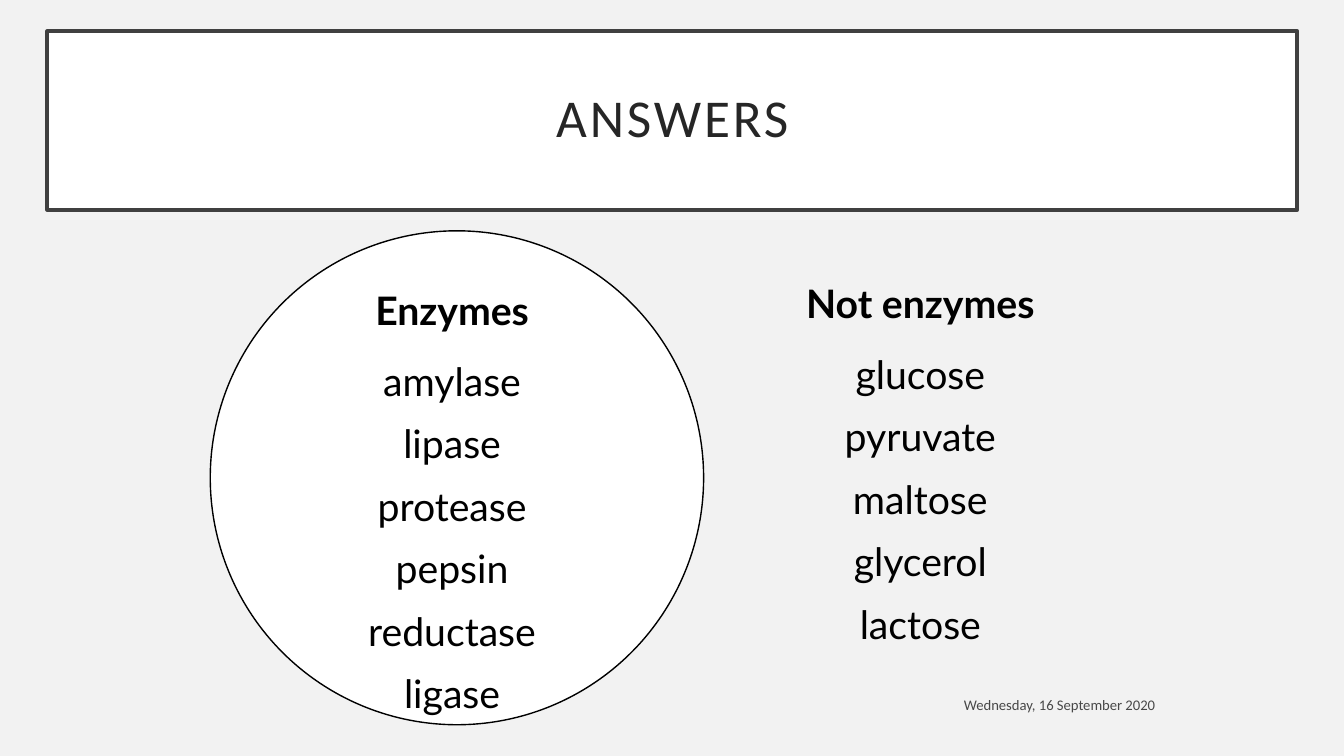
from lxml.etree import SubElement
from pptx import Presentation
from pptx.dml.color import RGBColor
from pptx.enum.shapes import MSO_SHAPE
from pptx.enum.text import MSO_ANCHOR, MSO_AUTO_SIZE, PP_ALIGN
from pptx.oxml.ns import qn
from pptx.util import Pt

COLORS = {
    "background": "F2F2F2",
    "panel": "FFFFFF",
    "border": "404040",
    "title": "262626",
    "text": "000000",
}
ENZYMES = ["amylase", "lipase", "protease", "pepsin", "reductase", "ligase"]
NOT_ENZYMES = ["glucose", "pyruvate", "maltose", "glycerol", "lactose"]


def rgb(name):
    """Return the named colour."""
    return RGBColor.from_string(COLORS[name])


def style_panel(sp, border, width):
    """Give a shape the white fill and an outline."""
    sp.fill.solid()
    sp.fill.fore_color.rgb = rgb("panel")
    sp.line.color.rgb = rgb(border)
    sp.line.width = Pt(width)


def add_run(p, text, font, size, color, bold=False):
    """Add a formatted run to a paragraph."""
    r = p.add_run()
    r.text = text
    r.font.name = font
    r.font.size = Pt(size)
    r.font.bold = bold
    r.font.color.rgb = rgb(color)
    return r


def add_text_box(s, left, top, width, height):
    """Add a wrapping text box and return its text frame."""
    tf = s.shapes.add_textbox(Pt(left), Pt(top), Pt(width), Pt(height)).text_frame
    tf.word_wrap = True
    return tf


def format_title(s, text):
    """Place the title placeholder as a framed panel."""
    sp = s.shapes.title
    sp.left, sp.top, sp.width, sp.height = Pt(33.84), Pt(22.32), Pt(892.8), Pt(127.44)
    style_panel(sp, "border", 3)
    tf = sp.text_frame
    tf.auto_size = MSO_AUTO_SIZE.NONE
    tf.vertical_anchor = MSO_ANCHOR.MIDDLE
    tf.margin_left = tf.margin_right = Pt(21.6)
    tf.margin_top = tf.margin_bottom = Pt(14.4)
    p = tf.paragraphs[0]
    p.alignment = PP_ALIGN.CENTER
    p.line_spacing = 0.9
    r = add_run(p, text, "Calibri", 38, "title")
    r.font._element.set("spc", "200")


def add_circle(s, left, top, width, height):
    """Add the outlined circle behind the enzymes."""
    sp = s.shapes.add_shape(
        MSO_SHAPE.OVAL, Pt(left), Pt(top), Pt(width), Pt(height))
    sp.shadow.inherit = False
    style_panel(sp, "text", 1)


def add_word_list(s, left, top, width, height, heading, words):
    """Add a bold heading with centred words below it."""
    tf = add_text_box(s, left, top, width, height)
    for i, word in enumerate([heading] + words):
        p = tf.add_paragraph() if i else tf.paragraphs[0]
        p.alignment = PP_ALIGN.CENTER
        p.line_spacing = 1.15
        p.space_after = Pt(6 if i else 12)
        add_run(p, word, "Lato", 28, "text", bold=i == 0)


def add_date(s, text):
    """Add the right-aligned translucent date."""
    tf = add_text_box(s, 615.6, 491.04, 216.72, 25.2)
    tf.vertical_anchor = MSO_ANCHOR.MIDDLE
    p = tf.paragraphs[0]
    p.alignment = PP_ALIGN.RIGHT
    r = add_run(p, text, "Calibri", 10.5, "text")
    color = r.font._element.find(".//" + qn("a:srgbClr"))
    SubElement(color, qn("a:alpha")).set("val", "70000")


def main():
    """Build and save the answers slide."""
    prs = Presentation()
    prs.slide_width, prs.slide_height = Pt(960), Pt(540)
    s = prs.slides.add_slide(prs.slide_layouts[5])
    s.background.fill.solid()
    s.background.fill.fore_color.rgb = rgb("background")
    add_date(s, "Wednesday, 16 September 2020")
    format_title(s, "ANSWERS")
    add_circle(s, 150.2, 164.9, 352.4, 352.8)
    add_word_list(s, 225.36, 195.84, 195.12, 321.84, "Enzymes", ENZYMES)
    add_word_list(s, 527.04, 190.8, 260.64, 313.92, "Not enzymes", NOT_ENZYMES)
    prs.save("out.pptx")


if __name__ == "__main__":
    main()
